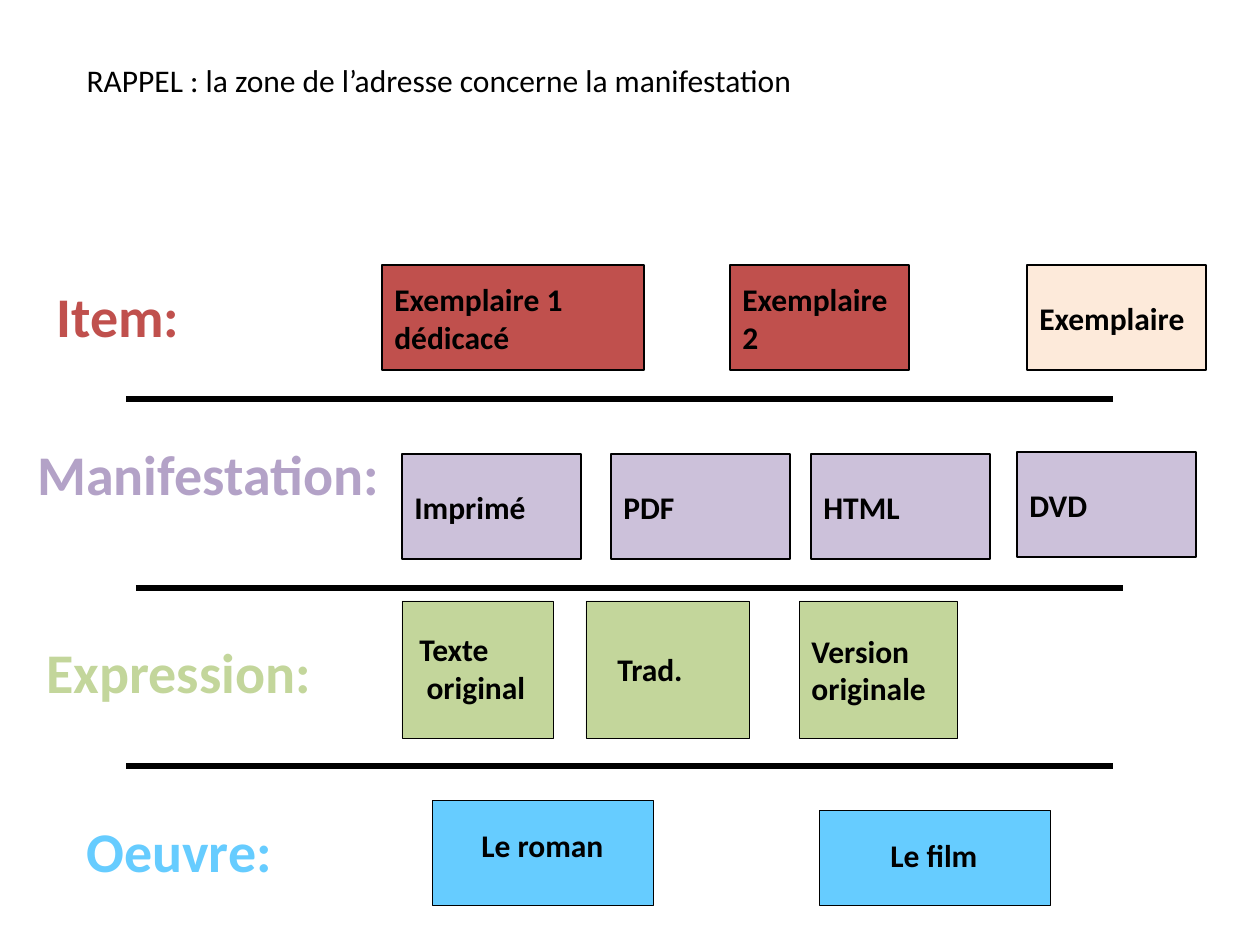
"""Build a slide that sorts examples by item, manifestation, expression and work."""
from dataclasses import dataclass

from lxml.etree import SubElement
from pptx import Presentation
from pptx.dml.color import RGBColor
from pptx.enum.shapes import MSO_CONNECTOR, MSO_SHAPE
from pptx.enum.text import MSO_ANCHOR, MSO_AUTO_SIZE, PP_ALIGN
from pptx.oxml.ns import qn
from pptx.util import Emu, Pt

EMU_PER_PX = 914400 / 126


@dataclass(frozen=True)
class Theme:
    font: str = "Calibri"
    ink: str = "000000"
    item: str = "C0504D"
    other_item: str = "FDEADA"
    manifestation: str = "CCC1DA"
    manifestation_heading: str = "B3A2C7"
    expression: str = "C3D69B"
    work: str = "66CCFF"
    heading_size: int = 32
    body_size: int = 18
    divider_width: float = 3
    border_width: float = 1
    hairline_width: float = 0.25


THEME = Theme()

HEADINGS = [
    ("Item:", THEME.item, (44, 275, 150, 81)),
    ("Manifestation:", THEME.manifestation_heading, (25, 433, 377, 79)),
    ("Expression:", THEME.expression, (34, 631, 292, 81)),
    ("Oeuvre:", THEME.work, (74, 810, 213, 81)),
]
DIVIDERS = [(126, 399), (136, 588), (126, 766)]
DIVIDER_LENGTH = 987
CARD_WIDTH, CARD_HEIGHT = 179, 105
CARDS = [
    ("Exemplaire 1\ndédicacé", THEME.item, 382, 265, 262),
    ("Exemplaire\n2", THEME.item, 730, 265, CARD_WIDTH),
    ("Exemplaire", THEME.other_item, 1027, 265, CARD_WIDTH),
    ("Imprimé", THEME.manifestation, 402, 454, CARD_WIDTH),
    ("PDF", THEME.manifestation, 611, 454, CARD_WIDTH),
    ("HTML", THEME.manifestation, 811, 454, CARD_WIDTH),
    ("DVD", THEME.manifestation, 1017, 452, CARD_WIDTH),
]
FRAMED_LABELS = [
    ("Texte\n original", THEME.expression, (402, 601, 151, 137), (407, 624, 132, 89)),
    ("Trad.", THEME.expression, (586, 601, 163, 137), (605, 644, 91, 50)),
    ("Le film", THEME.work, (819, 810, 231, 95), (878, 830, 113, 50)),
    ("Le roman", THEME.work, (432, 800, 221, 105), (469, 820, 149, 50)),
]


def px(length):
    """Turn pixels into EMU."""
    return Emu(round(length * EMU_PER_PX))


def apply_format(target, values):
    """Set each attribute named in a dict of format values."""
    for name, value in values.items():
        setattr(target, name, value)


def place(shape, box):
    """Move and size a shape to a box in pixels."""
    apply_format(shape, dict(zip(("left", "top", "width", "height"), map(px, box))))


def write_text(shape, text, size, color, bold=True, anchor=MSO_ANCHOR.TOP):
    """Write left-aligned lines of text into a shape."""
    frame = shape.text_frame
    frame.text = text
    apply_format(frame, {
        "word_wrap": False,
        "auto_size": MSO_AUTO_SIZE.NONE,
        "vertical_anchor": anchor,
    })
    for paragraph in frame.paragraphs:
        paragraph.alignment = PP_ALIGN.LEFT
        for run in paragraph.runs:
            apply_format(run.font, {"name": THEME.font, "size": Pt(size), "bold": bold})
            run.font.color.rgb = RGBColor.from_string(color)


def add_title(slide, text, box):
    """Place and fill the title placeholder."""
    title = slide.shapes.title
    place(title, box)
    write_text(title, text, THEME.body_size, THEME.ink, bold=False)


def add_heading(slide, text, color, box):
    """Add the coloured name of a level."""
    heading = slide.shapes.add_textbox(*map(px, box))
    write_text(heading, text, THEME.heading_size, color)


def add_divider(slide, left, top):
    """Add a thick line between two levels."""
    divider = slide.shapes.add_connector(
        MSO_CONNECTOR.STRAIGHT, px(left), px(top), px(left + DIVIDER_LENGTH), px(top))
    divider.line.width = Pt(THEME.divider_width)
    divider.line.color.rgb = RGBColor.from_string(THEME.ink)
    SubElement(divider.element.spPr, qn("a:effectLst"))


def add_box(slide, box, fill, border=None, text="", anchor=MSO_ANCHOR.MIDDLE):
    """Add a filled rectangle with an optional border and text."""
    shape = slide.shapes.add_shape(MSO_SHAPE.RECTANGLE, *map(px, box))
    shape.shadow.inherit = False
    shape.fill.solid()
    shape.fill.fore_color.rgb = RGBColor.from_string(fill)
    if border is None:
        shape.line.fill.background()
    else:
        shape.line.width = Pt(border)
        shape.line.color.rgb = RGBColor.from_string(THEME.ink)
    if text:
        write_text(shape, text, THEME.body_size, THEME.ink, anchor=anchor)


def add_framed_label(slide, text, fill, frame_box, label_box):
    """Add a thin frame with a label of the same colour inside."""
    add_box(slide, frame_box, fill, THEME.hairline_width)
    add_box(slide, label_box, fill, text=text, anchor=MSO_ANCHOR.TOP)


def main():
    """Build and save the slide."""
    presentation = Presentation()
    apply_format(presentation, {"slide_width": px(1260), "slide_height": px(945)})
    slide = presentation.slides.add_slide(presentation.slide_layouts.get_by_name("Title Only"))
    add_title(slide, "RAPPEL : la zone de l’adresse concerne la manifestation", (74, 55, 738, 50))
    for left, top in DIVIDERS:
        add_divider(slide, left, top)
    for text, color, box in HEADINGS:
        add_heading(slide, text, color, box)
    for text, fill, left, top, width in CARDS:
        add_box(slide, (left, top, width, CARD_HEIGHT), fill, THEME.border_width, text)
    for text, fill, frame_box, label_box in FRAMED_LABELS:
        add_framed_label(slide, text, fill, frame_box, label_box)
    add_box(slide, (799, 601, 158, 137), THEME.expression, THEME.hairline_width,
            "Version\noriginale")
    presentation.save("out.pptx")


if __name__ == "__main__":
    main()
